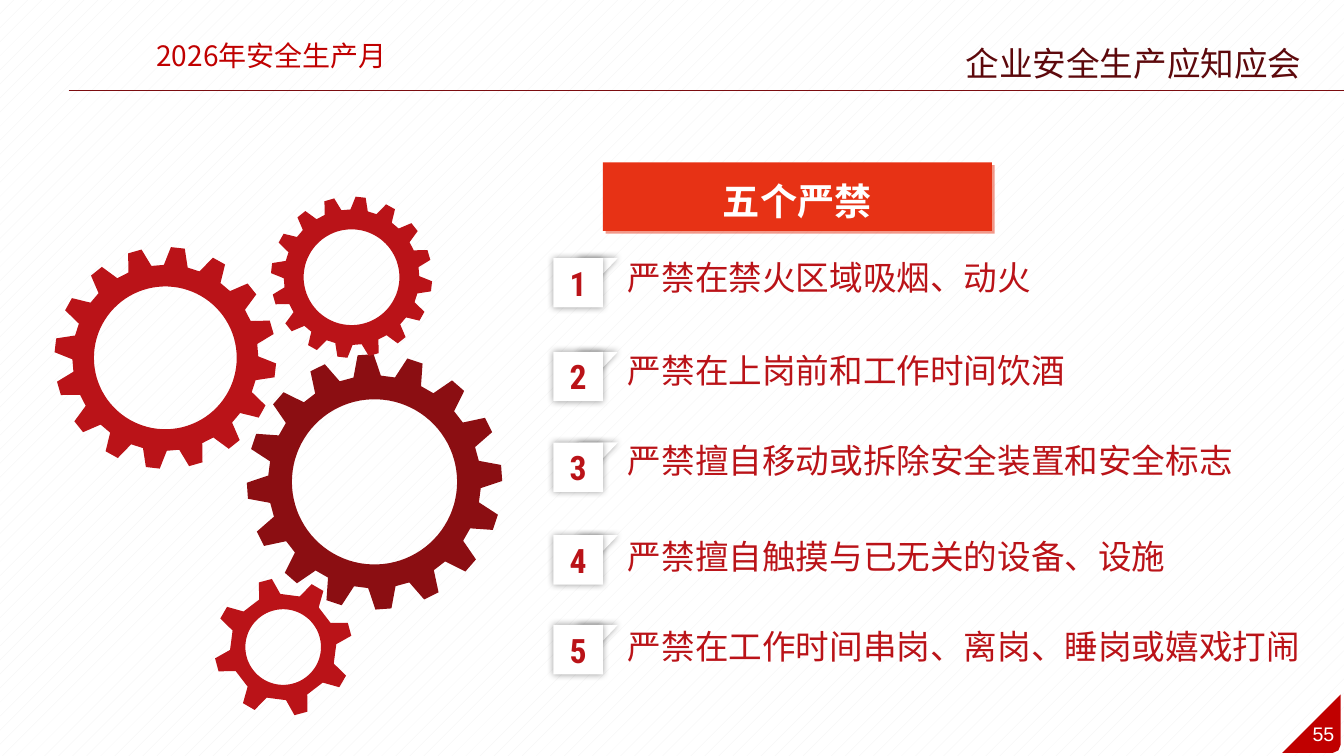
import math

from lxml import etree
from pptx import Presentation
from pptx import util as u
from pptx.dml.color import RGBColor
from pptx.enum import dml, shapes, text
from pptx.oxml import ns

COLORS = {
    "white": "FFFFFF", "hatch": "F2F2F2", "black": "000000", "rule": "7C0D10",
    "header": "C00000", "red": "BA1318", "dark": "8B0E12", "banner": "E73215",
    "title": "5D090C",
}
CJK = "Noto Sans CJK SC"
ROWS = [
    (184.3, 180, "严禁在禁火区域吸烟、动火", 305.3),
    (251.3, 246.2, "严禁在上岗前和工作时间饮酒", 329.8),
    (316.1, 311, "严禁擅自移动或拆除安全装置和安全标志", 450.7),
    (382.3, 379.4, "严禁擅自触摸与已无关的设备、设施", 402.5),
    (446.4, 443.5, "严禁在工作时间串岗、离岗、睡岗或嬉戏打闹", 523.4),
]


def color(name):
    return RGBColor.from_string(COLORS[name])


def write_text(box, words, size=24, font=CJK, ink="red", bold=False, align="LEFT",
               anchor="TOP", wrap=True, grow=False, spacing=None):
    frame = box.text_frame
    frame.word_wrap = wrap
    frame.vertical_anchor = text.MSO_ANCHOR[anchor]
    if grow:
        frame.auto_size = text.MSO_AUTO_SIZE.SHAPE_TO_FIT_TEXT
    para = frame.paragraphs[0]
    para.alignment = text.PP_ALIGN[align]
    if spacing:
        para.line_spacing = spacing
    span = para.add_run()
    span.text = words
    span.font.size = u.Pt(size)
    span.font.bold = bold
    span.font.color.rgb = color(ink)
    span.font.name = font
    etree.SubElement(span._r.get_or_add_rPr(), ns.qn("a:ea"), typeface=font)


class SafetySlide:
    """Draws the elements of the safety slide in one style."""

    def __init__(self, page):
        self.page = page
        self.shapes = page.shapes

    def background(self):
        fill = self.page.background.fill
        fill.patterned()
        fill.pattern = dml.MSO_PATTERN.PERCENT_5
        fill.fore_color.rgb = color("hatch")
        fill.back_color.rgb = color("white")

    def group(self):
        self.shapes = self.page.shapes.add_group_shape().shapes

    def ungroup(self):
        self.shapes = self.page.shapes

    def line(self, x1, y1, x2, y2, ink, width):
        rule = self.shapes.add_connector(
            shapes.MSO_CONNECTOR.STRAIGHT, *map(u.Pt, (x1, y1, x2, y2)))
        rule.line.color.rgb = color(ink)
        rule.line.width = u.Pt(width)
        etree.SubElement(rule._element.spPr, ns.qn("a:effectLst"))

    def paint(self, shape, ink):
        shape.shadow.inherit = False
        shape.fill.solid()
        shape.fill.fore_color.rgb = color(ink)
        shape.line.fill.background()

    def shape(self, kind, left, top, width, height, ink, flip=False):
        shape = self.shapes.add_shape(
            shapes.MSO_SHAPE[kind], *map(u.Pt, (left, top, width, height)))
        self.paint(shape, ink)
        if flip:
            shape._element.spPr.xfrm.set("flipV", "1")
        return shape

    def shadow(self, shape, ink, alpha, blur=0, distance=0, angle=0):
        effects = shape._element.spPr.find(ns.qn("a:effectLst"))
        outer = etree.SubElement(
            effects, ns.qn("a:outerShdw"), blurRad=str(u.Pt(blur)),
            dist=str(u.Pt(distance)), dir=str(angle * 60000), algn="ctr", rotWithShape="0")
        tint = etree.SubElement(outer, ns.qn("a:srgbClr"), val=COLORS[ink])
        etree.SubElement(tint, ns.qn("a:alpha"), val=str(alpha * 1000))

    def text(self, left, top, width, height, words, **style):
        box = self.shapes.add_textbox(*map(u.Pt, (left, top, width, height)))
        write_text(box, words, grow=True, **style)

    def outline(self, contours, ink):
        contours = [[(u.Pt(x), u.Pt(y)) for x, y in contour] for contour in contours]
        builder = self.shapes.build_freeform(*contours[0][0], scale=1.0)
        builder.add_line_segments(contours[0][1:], close=True)
        for contour in contours[1:]:
            builder.move_to(*contour[0])
            builder.add_line_segments(contour[1:], close=True)
        self.paint(builder.convert_to_shape(), ink)

    def gear(self, x, y, tip, root, hole, start, ink, teeth=16, tip_half=3.6, root_half=7.4):
        def point(radius, degrees):
            turn = math.radians(degrees)
            return x + radius * math.cos(turn), y + radius * math.sin(turn)

        corners = [(root, -root_half), (tip, -tip_half), (tip, tip_half), (root, root_half)]
        rim = [point(radius, start + 360 / teeth * tooth + offset)
               for tooth in range(teeth) for radius, offset in corners]
        opening = [point(hole, -degrees) for degrees in range(0, 360, 4)]
        self.outline([rim, opening], ink)

    def rule_row(self, number, top, text_top, words, width):
        self.group()
        fold = self.shape("RIGHT_TRIANGLE", 413.3, top, 28.1, 29.5, "white", flip=True)
        self.shadow(fold, "black", 40, blur=5)
        badge = self.shape("RECTANGLE", 395.3, top, 35.3, 35.3, "white")
        self.shadow(badge, "black", 40, blur=5)
        write_text(badge, str(number), font="Roboto Condensed", bold=True,
                   align="CENTER", anchor="MIDDLE")
        self.text(441.4, text_top, width, 36, words, wrap=False)
        self.ungroup()


def main():
    deck = Presentation()
    deck.slide_width, deck.slide_height = u.Pt(960), u.Pt(540)
    slide = SafetySlide(deck.slides.add_slide(deck.slide_layouts[6]))
    slide.background()

    slide.line(49, 64.4, 960, 64.4, "rule", 0.75)
    slide.outline([[(957.6, 496), (957.6, 532), (956, 536), (952, 537.8), (915.8, 537.8)]],
                  "header")
    slide.text(929.5, 511.9, 31.7, 24.5, "55", size=14, font="Arial", ink="white",
               align="CENTER", wrap=False)
    slide.text(70.6, 23.8, 247, 31.7, "2026年安全生产月", size=20, ink="header", align="CENTER")

    for number, row in enumerate(ROWS, 1):
        slide.rule_row(number, *row)

    slide.gear(267.5, 344.2, 91.2, 76, 59, -4, "dark")
    slide.gear(118.1, 255.6, 79.2, 66.4, 51, 6.5, "red")
    slide.gear(251.1, 198, 57.6, 48.4, 34.2, 6.5, "red")
    slide.gear(202.3, 462.2, 49.3, 38, 27, -15, "red", teeth=8, tip_half=5.6, root_half=11.9)

    banner = slide.shape("RECTANGLE", 430.6, 115.9, 277.9, 49, "banner")
    slide.shadow(banner, "banner", 50, distance=2.8, angle=45)
    write_text(banner, "五个严禁", size=26.6, ink="white", bold=True, align="CENTER",
               anchor="MIDDLE", wrap=False, spacing=1.2)
    slide.text(522, 27.4, 575.3, 36, "企业安全生产应知应会", ink="title", align="CENTER")

    deck.save("out.pptx")


if __name__ == "__main__":
    main()
